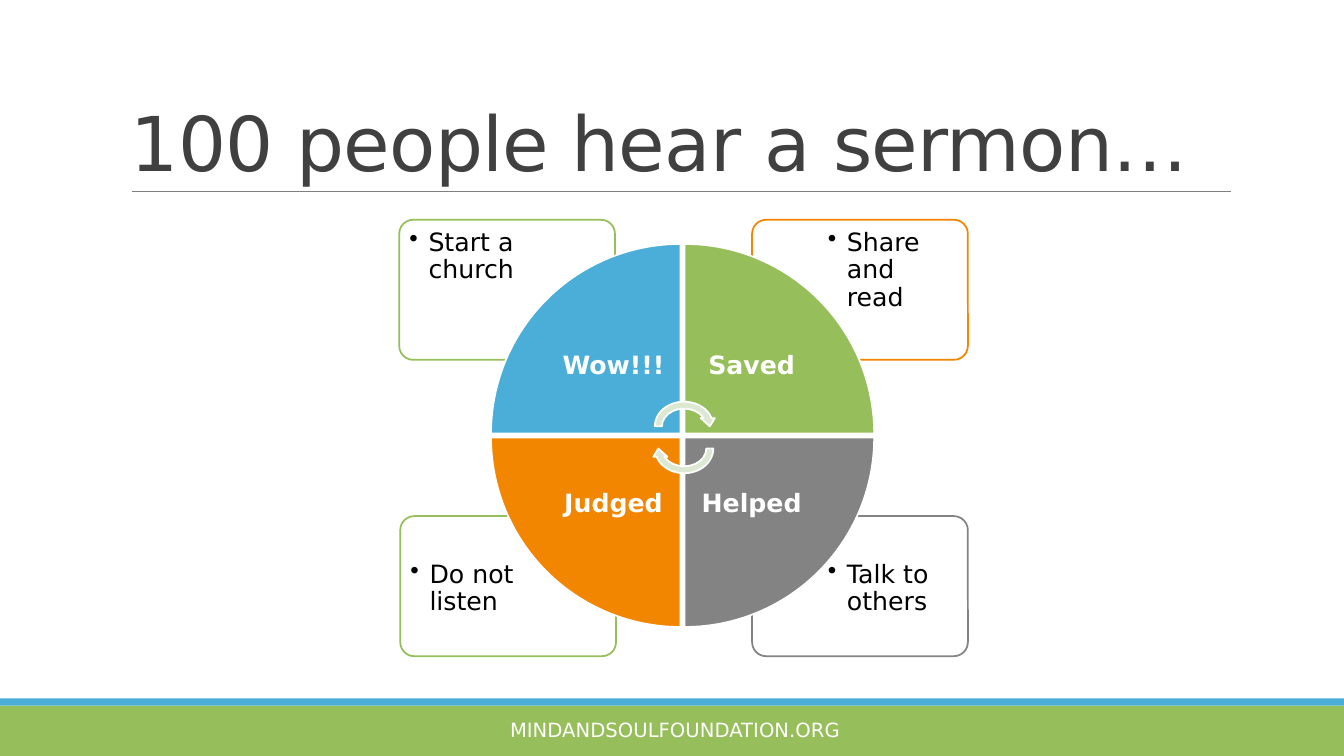
"""Build a slide about how 100 people respond to a sermon."""
from lxml import etree
from pptx import Presentation
from pptx import util as u
from pptx.dml.color import RGBColor
from pptx.enum import shapes, text
from pptx.oxml.ns import qn

TITLE = "100 people hear a sermon…"
FOOTER = "MINDANDSOULFOUNDATION.ORG"

# fields: column, row, rotation, label, wedge colour, outcome, card left, card colour
QUARTERS = [
    (1, 1, 180, "Helped", "gray", "Talk to others", 7.46, "gray"),
    (0, 1, 270, "Judged", "orange", "Do not listen", 3.97, "green"),
    (1, 0, 90, "Saved", "green", "Share and read", 7.46, "orange"),
    (0, 0, 0, "Wow!!!", "blue", "Start a church", 3.96, "green"),
]
ARROWS = [(3.95, 0), (4.17, 180)]

THEME = {
    "font": "DejaVu Sans",
    "colors": {"green": "96BE5A", "blue": "4AAED8", "orange": "F28600",
               "gray": "838383", "pale": "DDE8D2", "white": "FFFFFF",
               "black": "000000", "title": "404040", "rule": "808080"},
    "sizes": {"title": 54, "body": 18, "footer": 14},
}

CARD_WIDTH, CARD_HEIGHT = 2.14, 1.39
CARD_TOPS = (2.18, 5.12)
NOTE_WIDTH, NOTE_HEIGHT = 1.44, 0.98
NOTE_TOPS = (2.21, 5.5)
NOTE_SHIFTS = (0.03, 0.68)
WEDGE, WEDGE_STEP, WEDGE_LEFT, WEDGE_TOP = 1.88, 1.92, 4.87, 2.42
LABEL = 1.33
BULLET_INDENT = 0.19


def color(name):
    return RGBColor.from_string(THEME["colors"][name])


def add_box(page, kind, left, top, width, height, fill, line=None, rotation=0):
    box = page.shapes.add_shape(kind, *map(u.Inches, (left, top, width, height)))
    box.shadow.inherit = False
    box.rotation = rotation
    box.fill.solid()
    box.fill.fore_color.rgb = color(fill)
    if line:
        box.line.color.rgb = color(line)
        box.line.width = u.Pt(1.25)
    else:
        box.line.fill.background()
    return box


def add_text(page, words, left, top, width, height, size, ink, inset=0.1,
             align="LEFT", anchor="TOP", spacing=1.0, bold=False, bullet=False):
    box = page.shapes.add_textbox(*map(u.Inches, (left, top, width, height)))
    frame = box.text_frame
    frame.word_wrap = True
    frame.vertical_anchor = text.MSO_ANCHOR[anchor]
    frame.margin_left = frame.margin_right = u.Inches(inset)
    frame.margin_top = frame.margin_bottom = u.Inches(min(inset, 0.05) if inset == 0.1 else inset)
    para = frame.paragraphs[0]
    para.text = words
    para.alignment = text.PP_ALIGN[align]
    para.line_spacing = spacing
    if bullet:
        props = para._p.get_or_add_pPr()
        props.set("marL", str(u.Inches(BULLET_INDENT)))
        props.set("indent", str(-u.Inches(BULLET_INDENT)))
        etree.SubElement(props, qn("a:buChar")).set("char", "•")
    para.font.name = THEME["font"]
    para.font.size = u.Pt(THEME["sizes"][size])
    para.font.color.rgb = color(ink)
    para.font.bold = bold
    return para


def add_frame(page):
    add_box(page, shapes.MSO_SHAPE.RECTANGLE, 0, 7, 13.33, 0.5, "green")
    add_box(page, shapes.MSO_SHAPE.RECTANGLE, 0, 6.93, 13.33, 0.07, "blue")
    rule = page.shapes.add_connector(
        shapes.MSO_CONNECTOR.STRAIGHT, *map(u.Inches, (1.31, 1.9, 12.21, 1.9)))
    rule.line.color.rgb = color("rule")
    rule.line.width = u.Pt(0.5)
    etree.SubElement(rule._element.spPr, qn("a:effectLst"))
    add_text(page, FOOTER, 4.49, 7.07, 4.41, 0.34, "footer", "white", align="CENTER")
    title = add_text(page, TITLE, 1.2, 0.31, 11, 1.59, "title", "title",
                     anchor="BOTTOM", spacing=0.85)
    title.runs[0]._r.get_or_add_rPr().set("spc", "-50")


def add_cards(page):
    for column, row, _, _, _, outcome, left, outline in QUARTERS:
        card = add_box(page, shapes.MSO_SHAPE.ROUNDED_RECTANGLE, left, CARD_TOPS[row],
                       CARD_WIDTH, CARD_HEIGHT, "white", outline)
        card.adjustments[0] = 0.1
        add_text(page, outcome, left + NOTE_SHIFTS[column], NOTE_TOPS[row], NOTE_WIDTH,
                 NOTE_HEIGHT, "body", "black", inset=0.07, spacing=0.9, bullet=True)


def add_wheel(page):
    for column, row, rotation, label, fill, *_ in QUARTERS:
        left = WEDGE_LEFT + column * WEDGE_STEP
        top = WEDGE_TOP + row * WEDGE_STEP
        add_box(page, shapes.MSO_SHAPE.PIE_WEDGE, left, top, WEDGE, WEDGE,
                fill, "white", rotation)
        inward = WEDGE - LABEL
        add_text(page, label, left + (1 - column) * inward, top + (1 - row) * inward,
                 LABEL, LABEL, "body", "white", inset=0.14, align="CENTER",
                 anchor="MIDDLE", spacing=0.9, bold=True)
    for top, rotation in ARROWS:
        add_box(page, shapes.MSO_SHAPE.CIRCULAR_ARROW, 6.46, top, 0.65, 0.56,
                "pale", "white", rotation)


def main():
    deck = Presentation()
    deck.slide_width, deck.slide_height = u.Inches(13.33), u.Inches(7.5)
    page = deck.slides.add_slide(deck.slide_layouts[6])
    add_frame(page)
    add_cards(page)
    add_wheel(page)
    deck.save("out.pptx")


if __name__ == "__main__":
    main()
